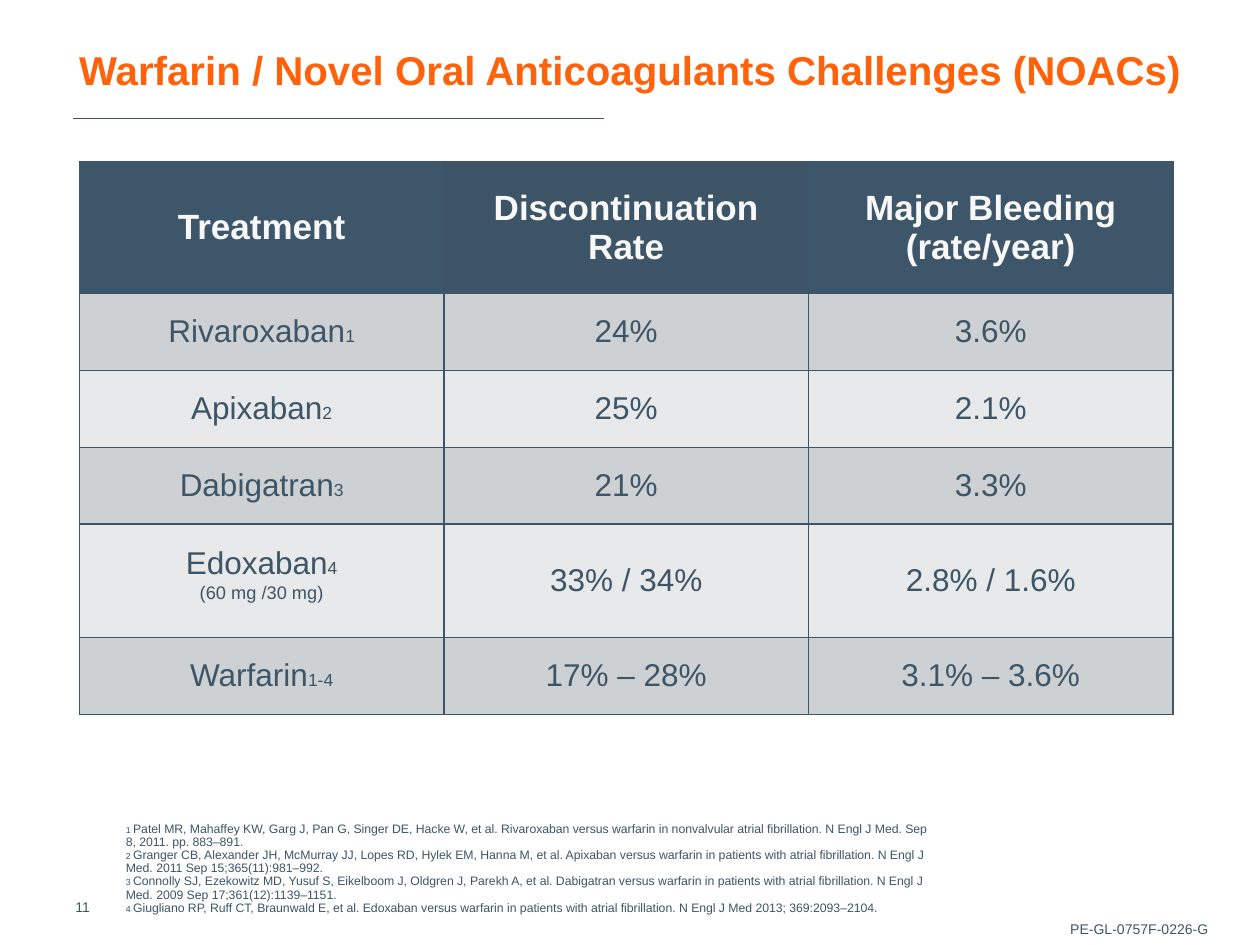
from pptx import Presentation
from pptx.dml.color import RGBColor
from pptx.enum.shapes import MSO_CONNECTOR
from pptx.enum.text import MSO_ANCHOR, PP_ALIGN
from pptx.oxml.ns import qn
from pptx.util import Inches, Pt
from lxml.etree import SubElement

SLATE = "3D5567"
BANDS = ("CED1D3", "E8E9EA")
HEADER_FILLS = ("3E566A", SLATE, "3E566A")

# Each cell is a list of paragraphs; each paragraph is a list of (text, format)
BODY = {"size": Pt(18), "color": SLATE}
NOTE = {"size": Pt(10), "color": SLATE}
HEADER = {"size": Pt(20), "color": "F8F8F8", "bold": True}
RAISED = {**BODY, "baseline": 30}

HEADINGS = ["Treatment", "Discontinuation\nRate", "Major Bleeding\n(rate/year)"]
TREATMENTS = [
    ("Rivaroxaban", "1", "", "24%", "3.6%"),
    ("Apixaban", "2", "", "25%", "2.1%"),
    ("Dabigatran", "3", "", "21%", "3.3%"),
    ("Edoxaban", "4", "(60 mg /30 mg)", "33% / 34%", "2.8% / 1.6%"),
    ("Warfarin", "1-4", "", "17% – 28%", "3.1% – 3.6%"),
]
ROW_HEIGHTS = [1.05, 0.61, 0.61, 0.61, 0.9, 0.61]

REFERENCES = [
    "Patel MR, Mahaffey KW, Garg J, Pan G, Singer DE, Hacke W, et al. Rivaroxaban versus warfarin "
    "in nonvalvular atrial fibrillation. N Engl J Med. Sep 8, 2011. pp. 883–891.",
    "Granger CB, Alexander JH, McMurray JJ, Lopes RD, Hylek EM, Hanna M, et al. Apixaban versus "
    "warfarin in patients with atrial fibrillation. N Engl J Med. 2011 Sep 15;365(11):981–992.",
    "Connolly SJ, Ezekowitz MD, Yusuf S, Eikelboom J, Oldgren J, Parekh A, et al. Dabigatran versus "
    "warfarin in patients with atrial fibrillation. N Engl J Med. 2009 Sep 17;361(12):1139–1151.",
    "Giugliano RP, Ruff CT, Braunwald E, et al. Edoxaban versus warfarin in patients with atrial "
    "fibrillation. N Engl J Med 2013; 369:2093–2104.",
]


def paint(color_format, color):
    color_format.rgb = RGBColor.from_string(color)


def add_span(para, text, look):
    for index, line in enumerate(text.split("\n")):
        if index:
            para.add_line_break()
        span = para.add_run()
        span.text = line
        values = {"name": "Arial", "bold": False, **look}
        paint(span.font.color, values.pop("color"))
        baseline = values.pop("baseline", 0)
        for name, value in values.items():
            setattr(span.font, name, value)
        if baseline:
            span.font._element.set("baseline", str(baseline * 1000))


def write(frame, paragraphs, **layout):
    for index, spans in enumerate(paragraphs):
        para = frame.add_paragraph() if index else frame.paragraphs[0]
        for name, value in layout.items():
            setattr(para, name, value)
        for text, look in spans:
            add_span(para, text, look)


def add_text(page, place, paragraphs, anchor=MSO_ANCHOR.TOP, **layout):
    box = page.shapes.add_textbox(*map(Inches, place))
    box.text_frame.word_wrap = True
    box.text_frame.vertical_anchor = anchor
    write(box.text_frame, paragraphs, **layout)


def add_rule(page, left, right, top):
    rule = page.shapes.add_connector(
        MSO_CONNECTOR.STRAIGHT, Inches(left), Inches(top), Inches(right), Inches(top))
    paint(rule.line.color, SLATE)
    rule.line.width = Pt(1)
    SubElement(rule._element.spPr, qn("a:effectLst"))


def fill_cell(cell, paragraphs, color):
    cell.vertical_anchor = MSO_ANCHOR.MIDDLE
    write(cell.text_frame, paragraphs, alignment=PP_ALIGN.CENTER)
    # Borders precede the fill in the cell properties
    properties = cell._tc.get_or_add_tcPr()
    for side in ("lnL", "lnR", "lnT", "lnB"):
        border = SubElement(properties, qn(f"a:{side}"), w=str(Pt(1)))
        solid = SubElement(border, qn("a:solidFill"))
        SubElement(solid, qn("a:srgbClr"), val=SLATE)
    cell.fill.solid()
    paint(cell.fill.fore_color, color)


def add_treatment_table(page):
    table = page.shapes.add_table(
        len(ROW_HEIGHTS), len(HEADINGS),
        Inches(0.63), Inches(1.28), Inches(8.68), Inches(sum(ROW_HEIGHTS))).table
    for row, height in zip(table.rows, ROW_HEIGHTS):
        row.height = Inches(height)

    # Header row
    for column, (heading, color) in enumerate(zip(HEADINGS, HEADER_FILLS)):
        fill_cell(table.cell(0, column), [[(heading, HEADER)]], color)

    # Banded treatment rows
    for row, (drug, sources, dose, *rates) in enumerate(TREATMENTS, start=1):
        name = [[(drug, BODY), (sources, NOTE)]]
        if dose:
            name.append([(dose, RAISED)])
        contents = [name] + [[[(rate, BODY)]] for rate in rates]
        for column, paragraphs in enumerate(contents):
            fill_cell(table.cell(row, column), paragraphs, BANDS[(row - 1) % 2])


def main():
    deck = Presentation()
    deck.slide_width, deck.slide_height = Inches(10), Inches(7.5)
    page = deck.slides.add_slide(deck.slide_layouts[6])

    # Page number, document code and title rule
    add_text(page, (0.5, 7.08, 0.75, 0.24), [[("11", {"size": Pt(8), "color": "425563"})]])
    add_text(page, (8.31, 7.26, 1.38, 0.24),
             [[("PE-GL-0757F-0226-G", {"size": Pt(8), "color": "3E5566"})]],
             alignment=PP_ALIGN.RIGHT)
    add_rule(page, 0.58, 4.79, 0.94)

    add_treatment_table(page)

    # Title
    title = {"size": Pt(23), "color": "FF620B", "bold": True}
    add_text(page, (0.53, 0.35, 9.28, 0.59),
             [[("Warfarin / Novel Oral Anticoagulants Challenges (NOACs)", title)]],
             line_spacing=0.9)

    # Numbered references
    mark = {"size": Pt(5), "color": SLATE}
    citation = {"size": Pt(7), "color": SLATE}
    add_text(page, (0.9, 6.69, 6.62, 0.62),
             [[(f"{number} ", mark), (text, citation)]
              for number, text in enumerate(REFERENCES, start=1)],
             anchor=MSO_ANCHOR.BOTTOM, line_spacing=0.9)

    deck.save("out.pptx")


if __name__ == "__main__":
    main()
